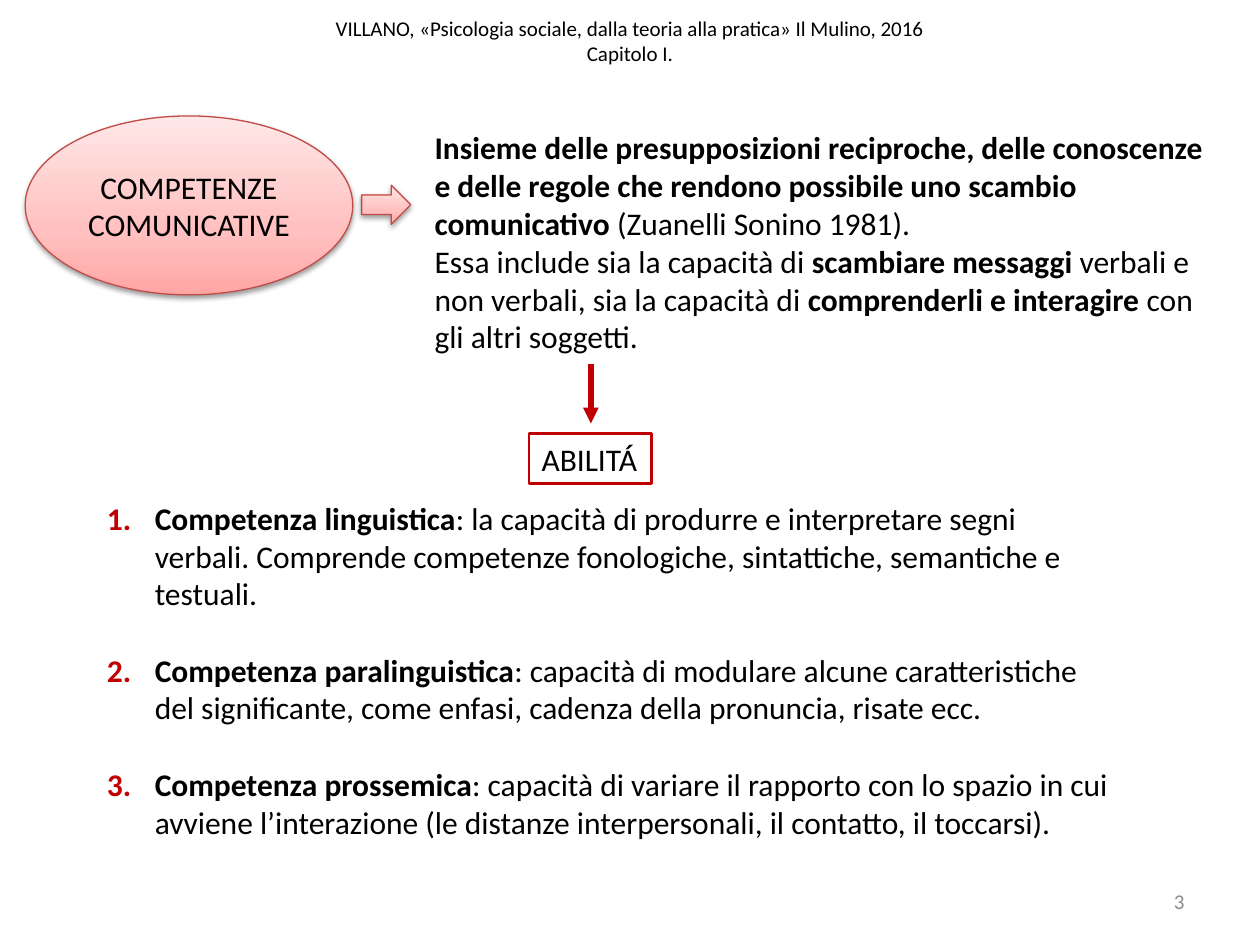
from lxml import etree
from pptx import Presentation
from pptx.dml.color import RGBColor
from pptx.enum.shapes import MSO_CONNECTOR, MSO_SHAPE
from pptx.enum.text import MSO_ANCHOR, PP_ALIGN
from pptx.oxml import parse_xml
from pptx.oxml.ns import nsdecls, qn
from pptx.util import Inches, Pt

LEFT, CENTER, RIGHT = PP_ALIGN.LEFT, PP_ALIGN.CENTER, PP_ALIGN.RIGHT
TOP, MIDDLE = MSO_ANCHOR.TOP, MSO_ANCHOR.MIDDLE
OVAL, ARROW, RECT = MSO_SHAPE.OVAL, MSO_SHAPE.RIGHT_ARROW, MSO_SHAPE.RECTANGLE
STRAIGHT = MSO_CONNECTOR.STRAIGHT

FONT = "Calibri"
BLACK, GREY, RED, ROSE = "000000", "8C8C8C", "C00000", "BF4C48"
PINKS = [(0, "FFA6A5"), (35, "FFC0BF"), (100, "FFE7E7")]

HEADER = ["VILLANO, «Psicologia sociale, dalla teoria alla pratica» Il Mulino, 2016",
          "Capitolo I."]
DEFINITION = [
    "**Insieme delle presupposizioni reciproche, delle conoscenze e delle regole "
    "che rendono possibile uno scambio comunicativo **(Zuanelli Sonino 1981).",
    "Essa include sia la capacità di **scambiare messaggi **verbali e non verbali, "
    "sia la capacità di **comprenderli e interagire **con gli altri soggetti.",
]
SKILLS = [
    "**Competenza linguistica**: la capacità di produrre e interpretare segni verbali. "
    "Comprende competenze fonologiche, sintattiche, semantiche e testuali.",
    "**Competenza paralinguistica**: capacità di modulare alcune caratteristiche del "
    "significante, come enfasi, cadenza della pronuncia, risate ecc.",
    "**Competenza prossemica**: capacità di variare il rapporto con lo spazio in cui "
    "avviene l’interazione (le distanze interpersonali, il contatto, il toccarsi).",
]


def rgb(color):
    """Turn a hex string into a colour."""
    return RGBColor.from_string(color)


def add_number(p, color):
    """Give a paragraph a hanging automatic number in a colour."""
    pPr = p._p.get_or_add_pPr()
    pPr.set("marL", str(Inches(0.38)))
    pPr.set("indent", str(-Inches(0.38)))
    clr = etree.SubElement(pPr, qn("a:buClr"))
    etree.SubElement(clr, qn("a:srgbClr"), val=color)
    etree.SubElement(pPr, qn("a:buFont"), typeface="+mj-lt")
    etree.SubElement(pPr, qn("a:buAutoNum"), type="arabicPeriod")


def write(shape, paragraphs, size=18, color=BLACK, align=LEFT, anchor=TOP,
          wrap=True, gap=0, number=None):
    """Write paragraphs into a shape, with text between ** marks in bold."""
    tf = shape.text_frame
    tf.word_wrap = wrap
    tf.vertical_anchor = anchor
    for i, text in enumerate(paragraphs):
        p = tf.paragraphs[0] if i == 0 else tf.add_paragraph()
        p.alignment = align
        if i and gap:
            p.space_before = Pt(gap)
        if number:
            add_number(p, number)
        for j, part in enumerate(text.split("**")):
            if part:
                r = p.add_run()
                r.text = part
                r.font.name, r.font.size = FONT, Pt(size)
                r.font.bold = j % 2 == 1
                r.font.color.rgb = rgb(color)


def add_text(s, x, y, w, h, paragraphs, **fmt):
    """Add a text box."""
    write(s.shapes.add_textbox(Inches(x), Inches(y), Inches(w), Inches(h)), paragraphs, **fmt)


def add_outline(s, kind, x, y, w, h, color, width):
    """Add an unfilled preset shape with a coloured line."""
    shape = s.shapes.add_shape(kind, Inches(x), Inches(y), Inches(w), Inches(h))
    shape.shadow.inherit = False
    shape.fill.background()
    shape.line.color.rgb = rgb(color)
    shape.line.width = Pt(width)
    return shape


def add_glossy(s, kind, x, y, w, h):
    """Add a shape with the pink gradient and a soft shadow below."""
    shape = add_outline(s, kind, x, y, w, h, ROSE, 0.75)
    spPr = shape._element.spPr
    stops = "".join(f'<a:gs pos="{pos * 1000}"><a:srgbClr val="{color}"/></a:gs>'
                    for pos, color in PINKS)
    spPr.replace(spPr.find(qn("a:noFill")), parse_xml(
        f'<a:gradFill {nsdecls("a")} rotWithShape="1"><a:gsLst>{stops}</a:gsLst>'
        '<a:lin ang="16200000" scaled="0"/></a:gradFill>'))
    spPr.find(qn("a:effectLst")).append(parse_xml(
        f'<a:outerShdw {nsdecls("a")} blurRad="{Pt(3.1)}" dist="{Pt(1.6)}" dir="5400000" '
        'rotWithShape="0"><a:srgbClr val="000000"><a:alpha val="38000"/></a:srgbClr>'
        '</a:outerShdw>'))
    return shape


def add_arrow(s, x1, y1, x2, y2, color, width):
    """Add a straight line with an arrowhead at its end."""
    line = s.shapes.add_connector(STRAIGHT, Inches(x1), Inches(y1), Inches(x2), Inches(y2))
    line.line.color.rgb = rgb(color)
    line.line.width = Pt(width)
    etree.SubElement(line.line._get_or_add_ln(), qn("a:tailEnd"), type="triangle")
    etree.SubElement(line._element.spPr, qn("a:effectLst"))


def main():
    """Build the slide and save it."""
    prs = Presentation()
    prs.slide_width, prs.slide_height = Inches(10), Inches(7.5)
    s = prs.slides.add_slide(prs.slide_layouts[6])

    add_text(s, 0, -0.11, 10, 0.87, HEADER, size=12, align=CENTER, anchor=MIDDLE)
    add_text(s, 7.17, 6.95, 2.33, 0.4, ["3"], size=12, color=GREY, align=RIGHT, anchor=MIDDLE)
    add_text(s, 3.35, 0.97, 6.38, 1.92, DEFINITION)

    topic = add_glossy(s, OVAL, 0.2, 0.92, 2.6, 1.42)
    write(topic, ["COMPETENZE COMUNICATIVE"], align=CENTER, anchor=MIDDLE)
    add_glossy(s, ARROW, 2.87, 1.47, 0.39, 0.31)

    add_arrow(s, 4.69, 2.89, 4.69, 3.36, RED, 3)
    skill_box = add_outline(s, RECT, 4.2, 3.44, 0.97, 0.4, RED, 1.5)
    write(skill_box, ["ABILITÁ"], wrap=False)
    add_text(s, 0.75, 3.91, 8.19, 3.74, SKILLS, gap=22, number=RED)

    prs.save("out.pptx")


if __name__ == "__main__":
    main()
